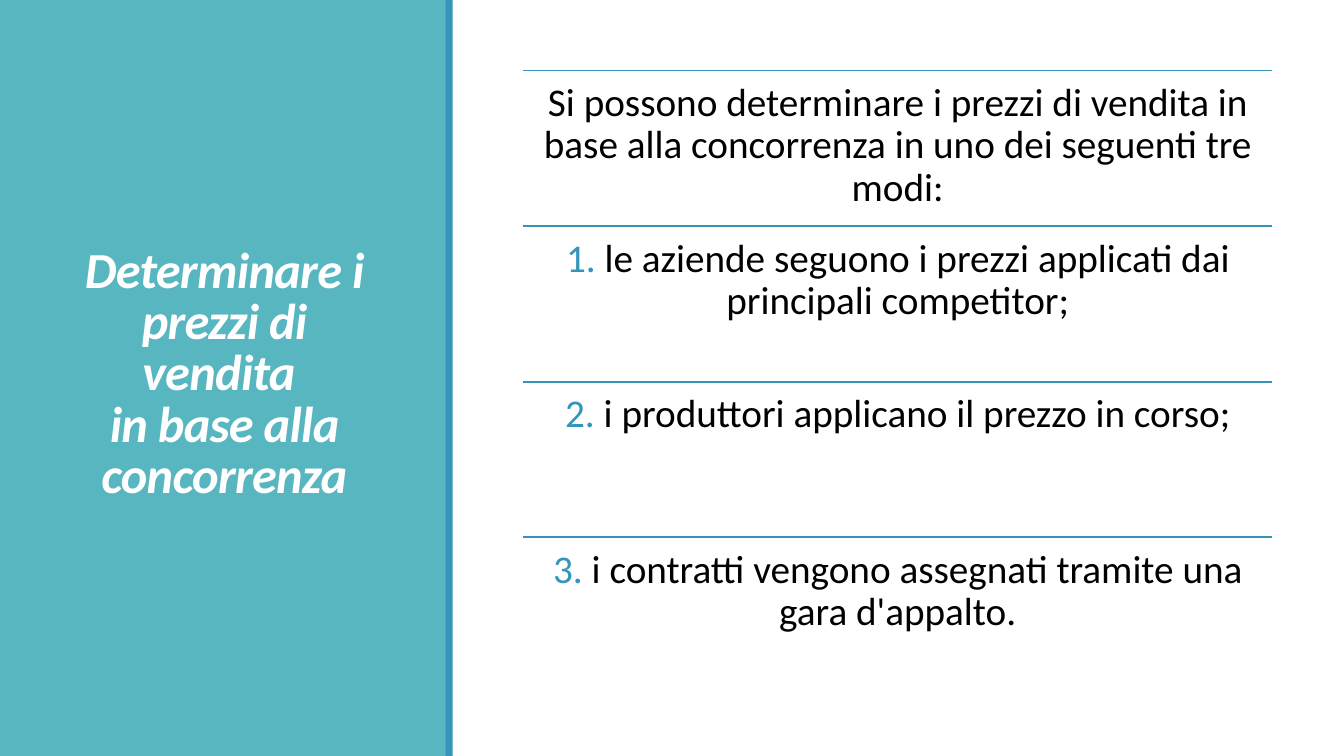
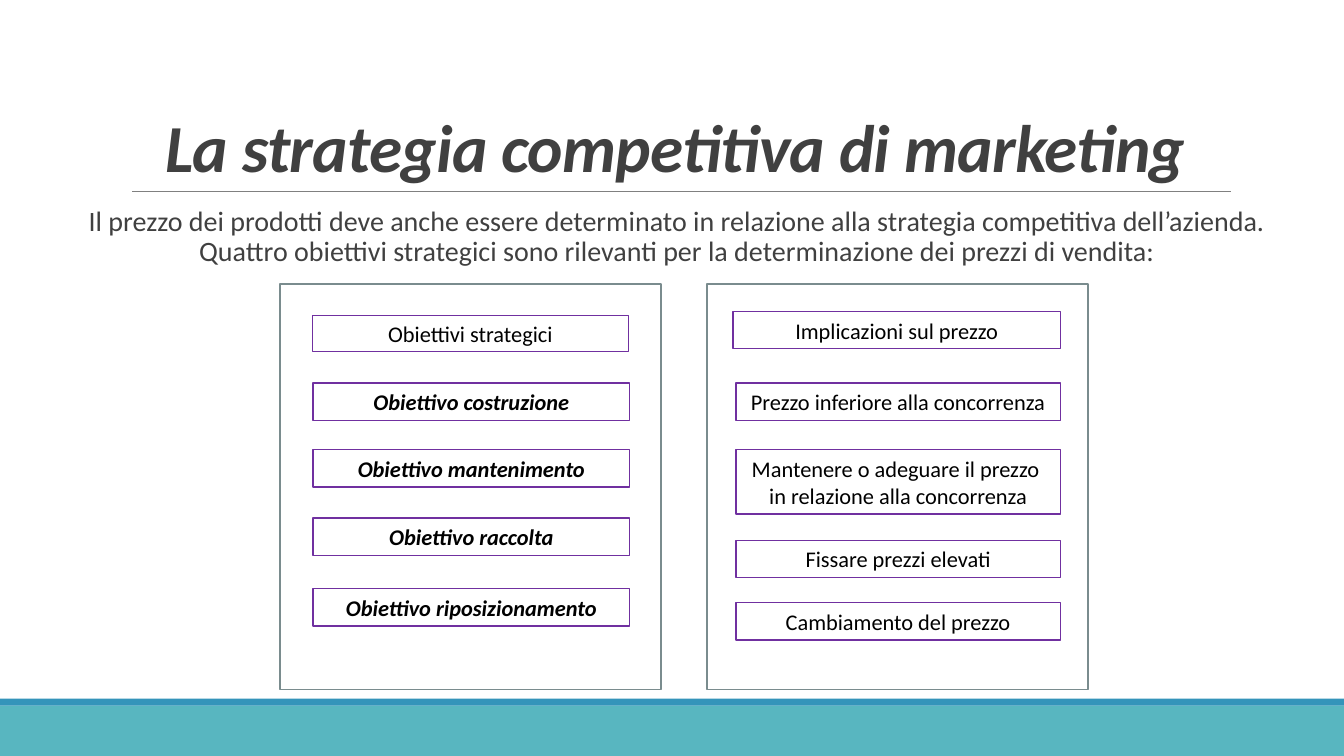
from copy import deepcopy

from pptx import Presentation
from pptx.dml.color import RGBColor
from pptx.enum.shapes import MSO_CONNECTOR as Connector, MSO_SHAPE as Shape
from pptx.enum.text import MSO_ANCHOR as Anchor, MSO_AUTO_SIZE as AutoSize, PP_ALIGN as Align
from pptx.oxml.ns import qn
from pptx.util import Inches, Pt
from lxml.etree import SubElement

WIDTH, HEIGHT = Inches(13.33), Inches(7.5)
TITLE_ONLY = 5
FONT = "Calibri"
TEAL, BLUE, WHITE, BLACK = "58B6C0", "3494BA", "FFFFFF", "000000"
DARK, GRAY, SLATE, PURPLE = "404040", "808080", "7A8C8E", "7030A0"

WAYS = [
    ("", "Si possono determinare i prezzi di vendita in base alla concorrenza in uno dei seguenti tre modi:"),
    ("1. ", "le aziende seguono i prezzi applicati dai principali competitor;"),
    ("2. ", "i produttori applicano il prezzo in corso;"),
    ("3. ", "i contratti vengono assegnati tramite una gara d'appalto."),
]
INTRO = (
    "Il prezzo dei prodotti deve anche essere determinato in relazione alla strategia competitiva "
    "dell’azienda. Quattro obiettivi strategici sono rilevanti per la determinazione dei prezzi di vendita:"
)
OBJECTIVES = [
    (50.67, "Obiettivo costruzione"),
    (59.47, "Obiettivo mantenimento"),
    (68.53, "Obiettivo raccolta"),
    (77.87, "Obiettivo riposizionamento"),
]
IMPLICATIONS = [
    (50.67, 4.93, ["Prezzo inferiore alla concorrenza"]),
    (59.47, 8.53, ["Mantenere o adeguare il prezzo ", "in relazione alla concorrenza"]),
    (71.47, 4.93, ["Fissare prezzi elevati"]),
    (79.73, 4.93, ["Cambiamento del prezzo"]),
]


def color(value):
    """Return the colour for a hex string."""
    return RGBColor.from_string(value)


def area(left, top, width, height):
    """Turn percentages of the slide into a position and size."""
    return (
        round(WIDTH * left / 100),
        round(HEIGHT * top / 100),
        round(WIDTH * width / 100),
        round(HEIGHT * height / 100),
    )


def write(frame, paragraphs, size, ink=BLACK, bold=False, italic=False, tracking=0,
          leading=1.0, anchor=Anchor.TOP, insets=(0.1, 0.05), indent=0):
    """Fill a frame with centred paragraphs of plain text or (text, colour) spans."""
    frame.word_wrap = True
    frame.auto_size = AutoSize.NONE
    frame.vertical_anchor = anchor
    frame.margin_left = frame.margin_right = Inches(insets[0])
    frame.margin_top = frame.margin_bottom = Inches(insets[1])
    for index, content in enumerate(paragraphs):
        para = frame.add_paragraph() if index else frame.paragraphs[0]
        para.alignment = Align.CENTER
        para.line_spacing = leading
        if indent:
            para._p.get_or_add_pPr().set("marL", str(Inches(indent)))
        spans = [(content, ink)] if isinstance(content, str) else content
        for text, tint in spans:
            for number, line in enumerate(text.split("\n")):
                if number:
                    para.add_line_break()
                span = para.add_run()
                span.text = line
                font = span.font
                font.name, font.size, font.bold, font.italic = FONT, Pt(size), bold, italic
                font.color.rgb = color(tint)
                properties = span._r.get_or_add_rPr()
                if tracking:
                    properties.set("spc", str(round(tracking * 100)))
                for line_break in para._p.findall(qn("a:br")):
                    if not len(line_break):
                        line_break.append(deepcopy(properties))


def add_box(page, place, fill=None, outline=None, weight=1):
    """Add a rectangle with an optional fill and outline."""
    box = page.shapes.add_shape(Shape.RECTANGLE, *area(*place))
    box.shadow.inherit = False
    if fill:
        box.fill.solid()
        box.fill.fore_color.rgb = color(fill)
    else:
        box.fill.background()
    if outline:
        box.line.color.rgb = color(outline)
        box.line.width = Pt(weight)
    else:
        box.line.fill.background()
    return box


def add_rule(page, left, top, width, ink, weight):
    """Add a horizontal line."""
    x, y, length, _ = area(left, top, width, 0)
    rule = page.shapes.add_connector(Connector.STRAIGHT, x, y, x + length, y)
    rule.line.color.rgb = color(ink)
    rule.line.width = Pt(weight)
    SubElement(rule._element.spPr, qn("a:effectLst"))


def add_text(page, place, paragraphs, **style):
    """Add a text box."""
    box = page.shapes.add_textbox(*area(*place))
    write(box.text_frame, paragraphs, **style)


def add_label(page, place, paragraphs, **style):
    """Add a purple-framed label."""
    box = add_box(page, place, outline=PURPLE)
    write(box.text_frame, paragraphs, size=16, anchor=Anchor.MIDDLE, **style)


def add_page(deck, band, stripe, title, place, **style):
    """Add a slide with its teal band, blue stripe and bold italic title."""
    page = deck.slides.add_slide(deck.slide_layouts[TITLE_ONLY])
    add_box(page, band, fill=TEAL)
    add_box(page, stripe, fill=BLUE)
    heading = page.shapes.title
    heading.left, heading.top, heading.width, heading.height = area(*place)
    write(heading.text_frame, [title], bold=True, italic=True, tracking=-0.5, leading=0.85, **style)
    page.shapes._spTree.append(heading._element)
    return page


def add_competition_page(deck):
    """Build the slide on pricing against competitors."""
    page = add_page(
        deck, (0, 0, 33.2, 100), (33.15, 0, 0.53, 100),
        "Determinare i prezzi di vendita \nin base alla concorrenza",
        (4.05, 7.6, 25.28, 84.13), size=36, ink=WHITE, anchor=Anchor.MIDDLE,
    )
    left, first, width, step = 38.93, 9.33, 55.73, 20.58
    for row, (number, text) in enumerate(WAYS):
        top = first + row * step
        spans = [(number, BLUE), (text, BLACK)] if number else text
        add_rule(page, left, top, width, BLUE, 1.25)
        add_text(page, (left, top, width, step), [spans], size=28, leading=0.9, insets=(0.12, 0.12))


def add_strategy_page(deck):
    """Build the slide on objectives and their price implications."""
    page = add_page(
        deck, (0, 93.33, 100, 6.67), (0, 92.4, 100, 0.93),
        "La strategia competitiva di marketing",
        (9, 4.13, 82.5, 21.2), size=48, ink=DARK, anchor=Anchor.BOTTOM,
    )
    add_rule(page, 9.83, 25.33, 81.75, GRAY, 0.5)
    add_text(page, (3.75, 26.8, 92.48, 12), [INTRO], size=20, ink=DARK, leading=0.9,
             insets=(0, 0.05), indent=0.1)
    for left in (20.85, 52.58):
        add_box(page, (left, 37.6, 28.35, 53.6), fill=WHITE, outline=SLATE, weight=1.25)
    add_label(page, (23.25, 41.73, 23.5, 4.8), ["Obiettivi strategici"])
    for top, text in OBJECTIVES:
        add_label(page, (23.3, top, 23.55, 4.93), [text], bold=True, italic=True)
    add_label(page, (54.53, 41.2, 24.38, 4.93), ["Implicazioni sul prezzo"])
    for top, height, lines in IMPLICATIONS:
        add_label(page, (54.75, top, 24.15, height), lines)


def main():
    """Build and save the deck."""
    deck = Presentation()
    deck.slide_width, deck.slide_height = WIDTH, HEIGHT
    add_competition_page(deck)
    add_strategy_page(deck)
    deck.save("out.pptx")


if __name__ == "__main__":
    main()
